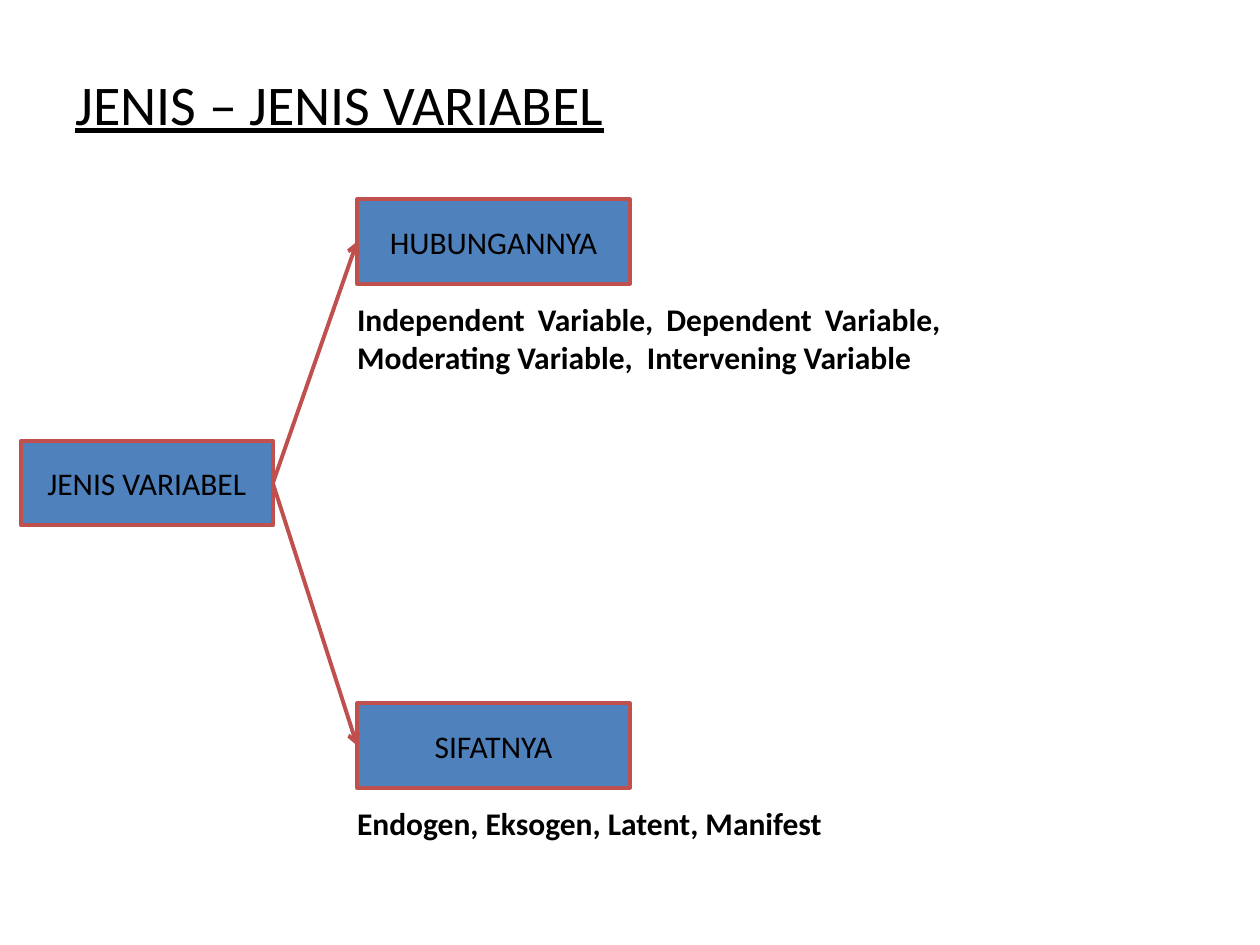
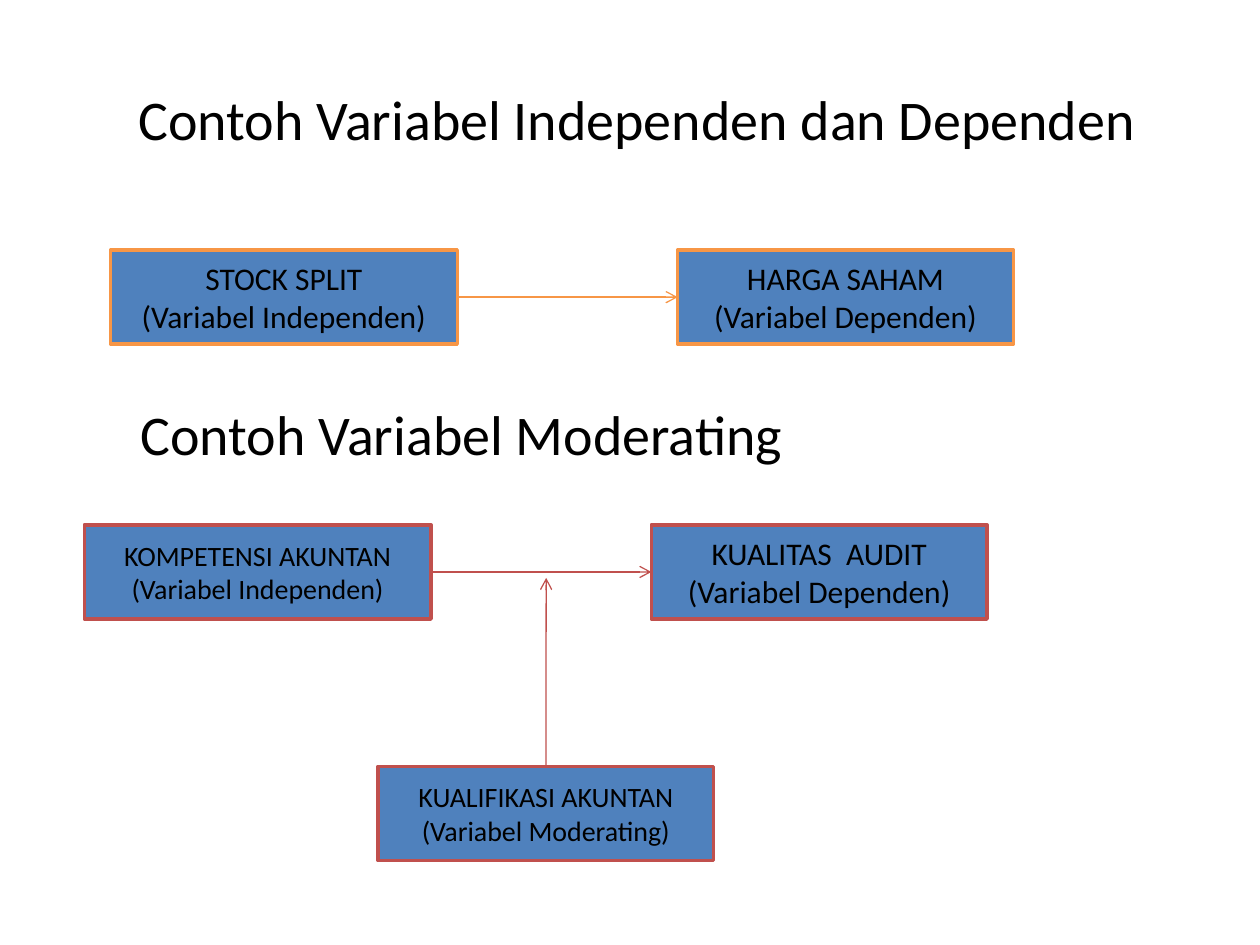
from lxml.etree import SubElement
from pptx import Presentation
from pptx.dml.color import RGBColor
from pptx.enum.shapes import MSO_CONNECTOR, MSO_SHAPE
from pptx.enum.text import MSO_ANCHOR, PP_ALIGN
from pptx.oxml.ns import qn
from pptx.util import Cm, Pt

COLORS = {"text": "000000", "box": "4F81BD", "red": "C0504D", "orange": "F79646"}
FONT = "Calibri"
TOP, LEFT, RIGHT = 0, 1, 3


def color(name):
    return RGBColor.from_string(COLORS[name])


def write(frame, text, size, align, bold=None, underline=None):
    frame.word_wrap = True
    frame.text = text
    for paragraph in frame.paragraphs:
        paragraph.alignment = align
        font = paragraph.font
        font.name, font.size = FONT, Pt(size)
        font.bold, font.underline = bold, underline
        font.color.rgb = color("text")


def add_text(slide, text, left, top, width, height, size, align, **style):
    frame = slide.shapes.add_textbox(Cm(left), Cm(top), Cm(width), Cm(height)).text_frame
    write(frame, text, size, align, **style)
    return frame


def add_heading(slide, text, left, top, width=22.86, underline=None):
    frame = add_text(slide, text, left, top, width, 1.7, 32, PP_ALIGN.LEFT, underline=underline)
    frame.paragraphs[0].space_before = Pt(3)


def add_variable(slide, text, left, top, width, height, outline="red", weight=2, size=18):
    box = slide.shapes.add_shape(MSO_SHAPE.RECTANGLE, Cm(left), Cm(top), Cm(width), Cm(height))
    box.shadow.inherit = False
    box.fill.solid()
    box.fill.fore_color.rgb = color("box")
    box.line.color.rgb = color(outline)
    box.line.width = Pt(weight)
    box.text_frame.vertical_anchor = MSO_ANCHOR.MIDDLE
    write(box.text_frame, text, size, PP_ALIGN.CENTER)
    return box


def add_arrow(slide, source, side, target=None, end=(0, 0), outline="red", weight=0.75):
    """Draw an arrow from a side of source to the left of target, or to the point end."""
    arrow = slide.shapes.add_connector(MSO_CONNECTOR.STRAIGHT, 0, 0, Cm(end[0]), Cm(end[1]))
    arrow.begin_connect(source, side)
    if target is not None:
        arrow.end_connect(target, LEFT)
    arrow.line.color.rgb = color(outline)
    arrow.line.width = Pt(weight)
    SubElement(arrow.line._get_or_add_ln(), qn("a:tailEnd"), type="arrow")
    SubElement(arrow._element.spPr, qn("a:effectLst"))


def add_effect(slide, cause, result, left, top, outline, cause_size=18):
    """Draw an independent variable with an arrow to the dependent one."""
    independent = add_variable(slide, cause, left, top, 6.99, 1.9, outline, size=cause_size)
    dependent = add_variable(slide, result, left + 11.43, top, 6.77, 1.9, outline)
    add_arrow(slide, independent, RIGHT, dependent, outline=outline)


def build_kinds(slide):
    add_heading(slide, "JENIS – JENIS VARIABEL", 1.27, 1.27, underline=True)
    root = add_variable(slide, "JENIS VARIABEL", 0.42, 8.89, 5.08, 1.7, weight=2.25)
    kinds = [
        ("HUBUNGANNYA", 4.02, 1.8,
         "Independent Variable, Dependent Variable, Moderating Variable,  Intervening Variable"),
        ("SIFATNYA", 14.18, 1.02, "Endogen, Eksogen, Latent, Manifest"),
    ]
    for name, top, height, members in kinds:
        kind = add_variable(slide, name, 7.2, top, 5.5, 1.7, weight=2.25)
        add_arrow(slide, root, RIGHT, kind, weight=2.25)
        add_text(slide, members, 6.95, top + 1.91, 12.27, height, 18, PP_ALIGN.JUSTIFY, bold=True)


def build_examples(slide):
    add_heading(slide, "Contoh Variabel Independen dan Dependen", 2.54, 1.58)
    add_effect(slide, "STOCK SPLIT\n(Variabel Independen)",
               "HARGA SAHAM (Variabel Dependen)", 2.23, 5.04, "orange")

    add_heading(slide, "Contoh Variabel Moderating", 2.58, 7.92, width=21.46)
    add_effect(slide, "KOMPETENSI AKUNTAN\n(Variabel Independen)",
               "KUALITAS  AUDIT (Variabel Dependen)", 1.7, 10.58, "red", cause_size=16)
    moderator = add_variable(slide, "KUALIFIKASI AKUNTAN (Variabel Moderating)",
                             7.62, 15.45, 6.77, 1.9, size=16)
    add_arrow(slide, moderator, TOP, end=(11.01, 11.65))


def main():
    deck = Presentation()
    deck.slide_width, deck.slide_height = Cm(25.4), Cm(19.05)
    for build in (build_kinds, build_examples):
        build(deck.slides.add_slide(deck.slide_layouts[6]))
    deck.save("out.pptx")


if __name__ == "__main__":
    main()
